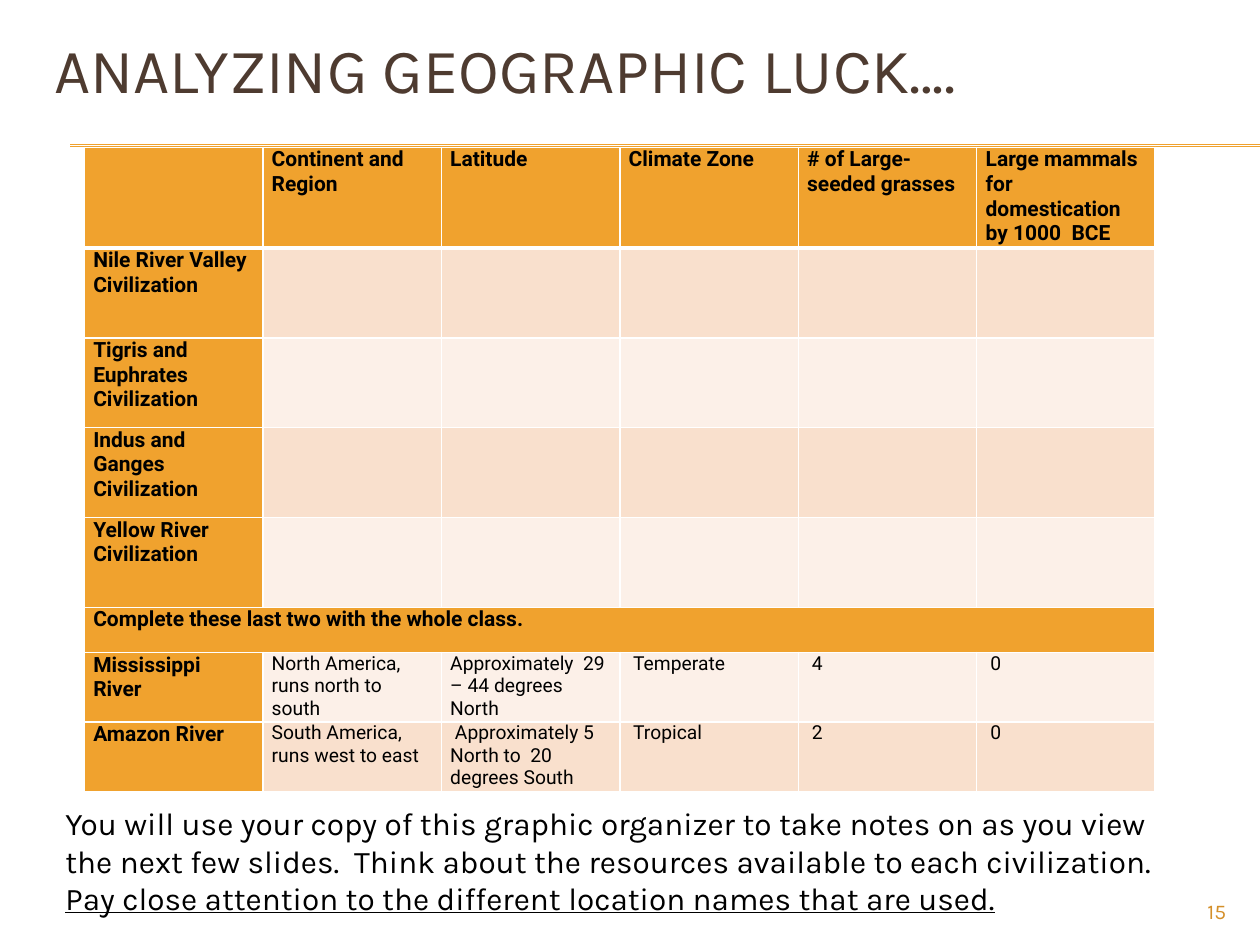
from lxml.etree import SubElement
from pptx import Presentation
from pptx.dml.color import RGBColor
from pptx.enum.shapes import MSO_CONNECTOR
from pptx.enum.text import MSO_ANCHOR, PP_ALIGN
from pptx.oxml.ns import qn
from pptx.util import Cm, Pt

COLORS = {
    "orange": "F0A22E", "number": "D48F29", "brown": "4E3B30",
    "peach": "F9E0CD", "cream": "FCF0E8", "white": "FFFFFF", "black": "000000",
}
ROWS = [
    ["", "Continent and Region", "Latitude", "Climate Zone",
     "# of Large-seeded grasses", "Large mammals for domestication  by 1000  BCE"],
    ["Nile River Valley Civilization"],
    ["Tigris and Euphrates Civilization"],
    ["Indus and Ganges Civilization"],
    ["Yellow River Civilization"],
    ["Complete these last two with the whole class."],
    ["Mississippi River", "North America, runs north to south",
     "Approximately  29 – 44 degrees  North", " Temperate", " 4", " 0"],
    ["Amazon River", "South America, runs west to east",
     " Approximately 5 North to  20 degrees South", " Tropical", " 2", " 0"],
]
ROW_HEIGHTS = [1.98] + [1.81] * 4 + [0.91, 1.35, 1.35]
HEADER_ROW, SPAN_ROW = 0, 5


def rgb(name):
    return RGBColor.from_string(COLORS[name])


def write(p, text, size, font="Karla", color="black", bold=False,
          underline=False, align=PP_ALIGN.LEFT):
    p.alignment = align
    p.font.size = Pt(size)
    if not text:
        return
    r = p.add_run()
    r.text = text
    r.font.name, r.font.size = font, Pt(size)
    r.font.bold, r.font.underline = bold, underline
    r.font.color.rgb = rgb(color)


def add_box(s, box, anchor=MSO_ANCHOR.TOP):
    tf = s.shapes.add_textbox(*map(Cm, box)).text_frame
    tf.word_wrap = True
    tf.vertical_anchor = anchor
    return tf


def set_borders(cell, **widths):
    tc_pr = cell._tc.get_or_add_tcPr()
    for side in "LRTB":
        ln = SubElement(tc_pr, qn(f"a:ln{side}"), w=str(Pt(widths.get(side, 1))))
        fill = SubElement(ln, qn("a:solidFill"))
        SubElement(fill, qn("a:srgbClr"), val=COLORS["white"])


def add_rules(s, left, top, width):
    # Two thin lines that nearly touch
    for y in (top, top + 0.03):
        line = s.shapes.add_connector(
            MSO_CONNECTOR.STRAIGHT, Cm(left), Cm(y), Cm(left + width), Cm(y))
        line.line.color.rgb = rgb("orange")
        line.line.width = Pt(0.75)
        SubElement(line._element.spPr, qn("a:effectLst"))


def add_title(s, box):
    tf = add_box(s, box, MSO_ANCHOR.MIDDLE)
    write(tf.paragraphs[0], "ANALYZING GEOGRAPHIC LUCK….", 36, color="brown")


def add_organizer(s, left, top, width):
    n_cols = len(ROWS[HEADER_ROW])
    table = s.shapes.add_table(len(ROWS), n_cols, Cm(left), Cm(top),
                               Cm(width), Cm(sum(ROW_HEIGHTS))).table
    for col in table.columns:
        col.width = Cm(width / n_cols)
    for i, (texts, height) in enumerate(zip(ROWS, ROW_HEIGHTS)):
        table.rows[i].height = Cm(height)
        for j in range(n_cols):
            cell = table.cell(i, j)
            heading = i in (HEADER_ROW, SPAN_ROW) or j == 0
            cell.margin_left = cell.margin_right = Cm(0.18)
            cell.margin_top = cell.margin_bottom = 0
            # The rule under the header is thicker
            set_borders(cell, T=3 if i == HEADER_ROW + 1 else 1,
                        B=3 if i == HEADER_ROW else 1)
            band = "peach" if i % 2 else "cream"
            cell.fill.solid()
            cell.fill.fore_color.rgb = rgb("orange" if heading else band)
            write(cell.text_frame.paragraphs[0],
                  texts[j] if j < len(texts) else "",
                  12 if heading else 11, font="Roboto", bold=heading)
    table.cell(SPAN_ROW, 0).merge(table.cell(SPAN_ROW, n_cols - 1))


def add_instructions(s, box):
    tf = add_box(s, box)
    write(tf.paragraphs[0],
          "You will use your copy of this graphic organizer to take notes on as "
          "you view the next few slides.  Think about the resources available to "
          "each civilization.", 18)
    write(tf.add_paragraph(),
          "Pay close attention to the different location names that are used.",
          18, underline=True)


def add_slide_number(s, box):
    tf = add_box(s, box)
    write(tf.paragraphs[0], "15", 12, color="number", align=PP_ALIGN.RIGHT)


def main():
    prs = Presentation()
    prs.slide_width, prs.slide_height = Cm(25.4), Cm(19.05)
    s = prs.slides.add_slide(prs.slide_layouts[6])
    add_rules(s, 1.42, 2.92, 23.98)
    add_slide_number(s, (22.86, 17.98, 2.11, 0.69))
    add_title(s, (0.84, 0.2, 24.13, 2.34))
    add_organizer(s, 1.7, 2.97, 21.59)
    add_instructions(s, (1.07, 16.08, 22.66, 2.57))
    prs.save("out.pptx")


if __name__ == "__main__":
    main()
